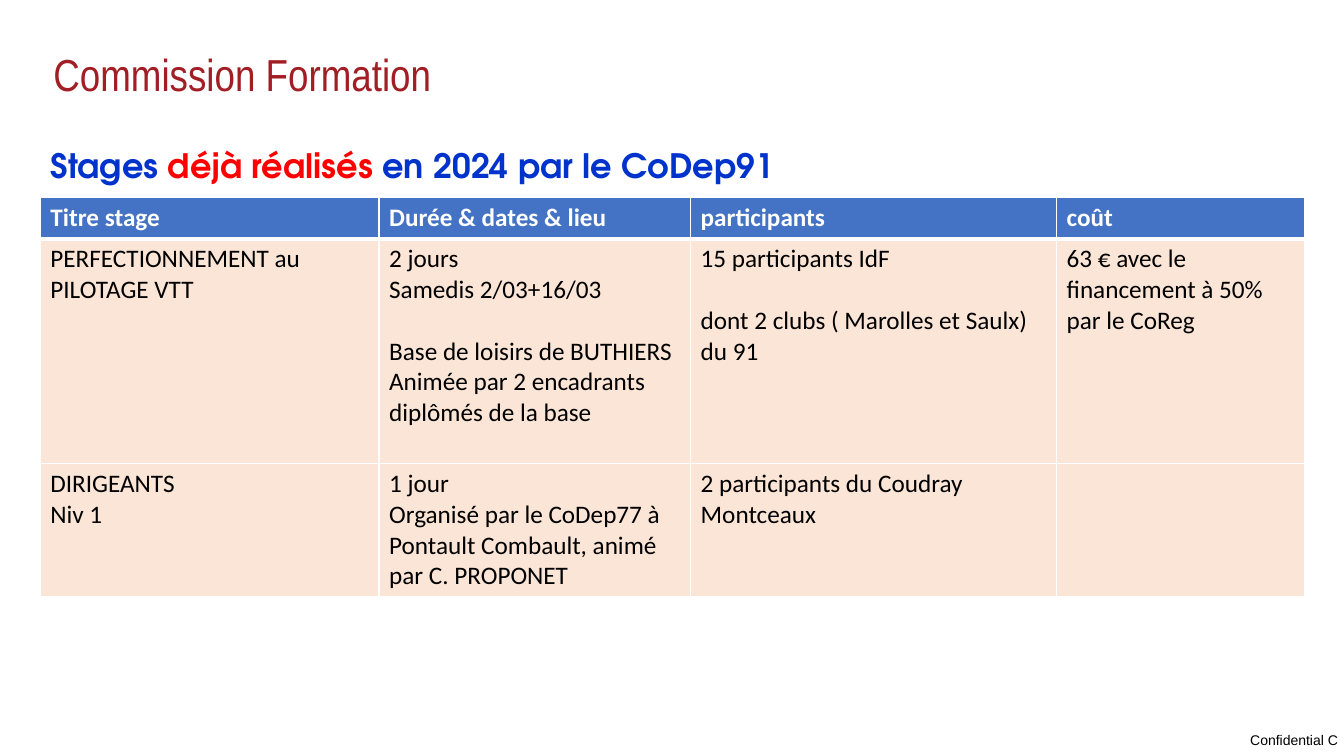
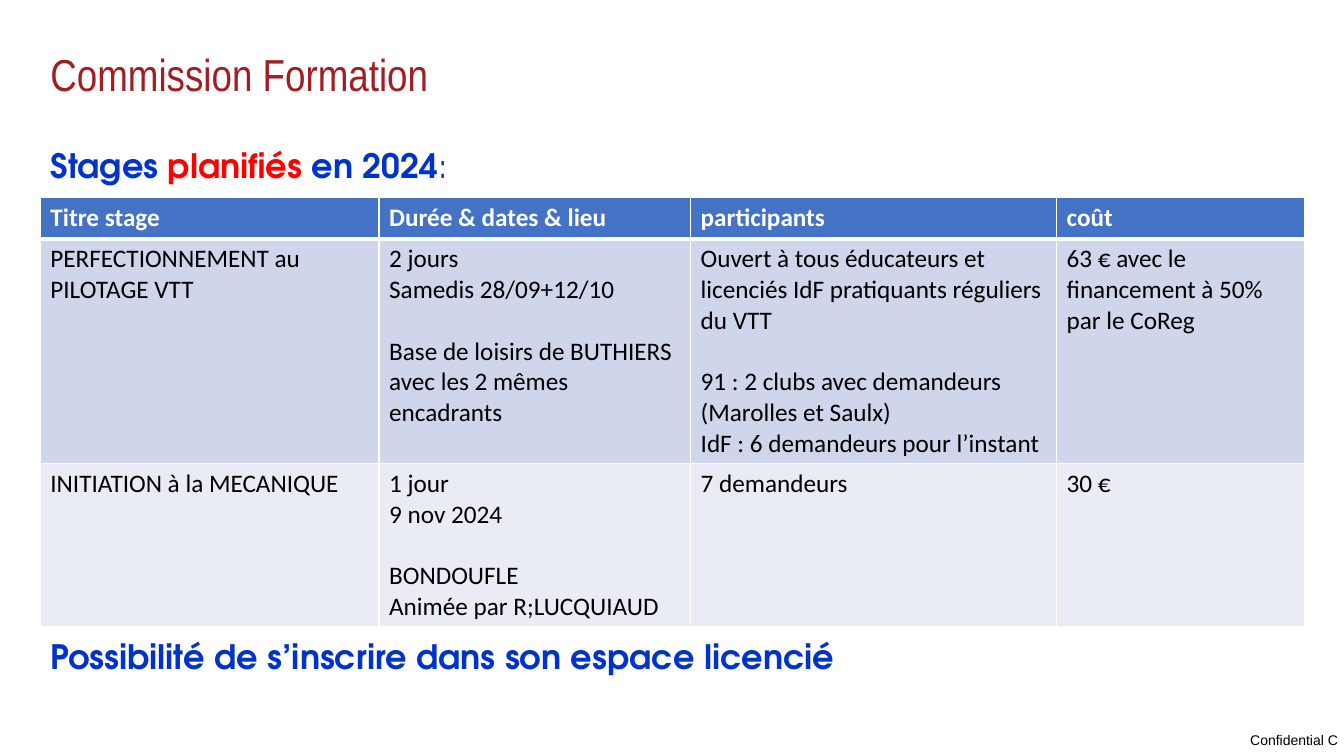
from lxml.etree import SubElement
from pptx import Presentation
from pptx.dml.color import RGBColor
from pptx.enum.text import MSO_ANCHOR as Anchor, MSO_AUTO_SIZE as AutoSize, PP_ALIGN as Align
from pptx.oxml.ns import qn
from pptx.util import Inches, Pt

# Shared look
SLIDE_WIDTH, SLIDE_HEIGHT = 13.33, 7.5
TITLE_ONLY = 5
MARGIN = 0.4
WHITE, BLACK = "FFFFFF", "000000"
TITLE_RED, BLUE, RED, NAVY = "A11E24", "0033CC", "FF0000", "292D78"
HEADER_FILL, PEACH, LAVENDER, PALE = "4472C4", "FBE5D6", "CFD5EA", "E9EBF5"
HEADING_FONT, TABLE_FONT = "TeX Gyre Adventor", "Calibri"

# Shared table grid
TABLE_TOP = 1.96
COLUMNS = (3.36, 3.09, 3.63, 2.46)
HEADER_HEIGHT, FIRST_STAGE_HEIGHT = 0.41, 2.23
HEADERS = ("Titre stage", "Durée & dates & lieu", "participants", "coût")
THIN, THICK = 1, 3


def rgb(value):
    return RGBColor.from_string(value)


def write_text(frame, text, *, font, size, color=BLACK, bold=False,
               line_spacing=None, group_gap=0):
    """Text is a string (blank line = new group) or a list of (text, color, bold) runs."""
    if isinstance(text, str):
        lines = [([(line, color, bold)], group_gap if number and not index else 0)
                 for number, group in enumerate(text.split("\n\n"))
                 for index, line in enumerate(group.split("\n"))]
    else:
        lines = [(text, 0)]
    for index, (runs, gap) in enumerate(lines):
        paragraph = frame.add_paragraph() if index else frame.paragraphs[0]
        paragraph.alignment = Align.LEFT
        paragraph.space_before = Pt(gap)
        if line_spacing:
            paragraph.line_spacing = line_spacing
        paragraph.font.size = Pt(size)
        for run_text, run_color, run_bold in runs:
            run = paragraph.add_run()
            run.text = run_text
            run.font.name = font
            run.font.size = Pt(size)
            run.font.bold = run_bold
            run.font.color.rgb = rgb(run_color)


def add_title(slide, text, left):
    title = slide.shapes.title
    title.left, title.top = Inches(left), Inches(0.39)
    title.width, title.height = Inches(10.76), Inches(0.75)
    title.text_frame.auto_size = AutoSize.NONE
    title.text_frame.vertical_anchor = Anchor.MIDDLE
    write_text(title.text_frame, text, font="Arial Narrow", size=32,
               color=TITLE_RED, line_spacing=0.9)


def add_textbox(slide, text, left, top, width, height, *, wrap=True, inset=None, **text_format):
    frame = slide.shapes.add_textbox(
        Inches(left), Inches(top), Inches(width), Inches(height)).text_frame
    frame.word_wrap = wrap
    if inset is not None:
        frame.margin_left = frame.margin_right = Inches(inset)
        frame.margin_top = frame.margin_bottom = Inches(inset)
    write_text(frame, text, **text_format)


def add_heading(slide, text, top):
    add_textbox(slide, text, MARGIN, top, 11.19, 0.5, font=HEADING_FONT, size=24,
                color=BLUE, bold=True, line_spacing=0.9)


def add_footer(slide):
    add_textbox(slide, "Confidential C", 12.4, 7.26, 0.91, 0.17, wrap=False, inset=0,
                font="Arial", size=10)


def set_borders(cell, top, bottom):
    properties = cell._tc.get_or_add_tcPr()
    for side, width in (("L", THIN), ("R", THIN), ("T", top), ("B", bottom)):
        line = SubElement(properties, qn(f"a:ln{side}"), w=str(Pt(width)))
        fill = SubElement(line, qn("a:solidFill"))
        SubElement(fill, qn("a:srgbClr"), val=WHITE)


def add_stage_table(slide, stages, fills, last_height):
    heights = (HEADER_HEIGHT, FIRST_STAGE_HEIGHT, last_height)
    rows = (HEADERS, *stages)
    table = slide.shapes.add_table(
        len(rows), len(COLUMNS), Inches(MARGIN), Inches(TABLE_TOP),
        Inches(sum(COLUMNS)), Inches(sum(heights))).table
    table.horz_banding = False
    for column, width in zip(table.columns, COLUMNS):
        column.width = Inches(width)
    for index, (texts, height, fill) in enumerate(zip(rows, heights, (HEADER_FILL, *fills))):
        table.rows[index].height = Inches(height)
        is_header = index == 0
        for cell, text in zip(table.rows[index].cells, texts):
            set_borders(cell, top=THICK if index == 1 else THIN,
                        bottom=THICK if is_header else THIN)
            cell.fill.solid()
            cell.fill.fore_color.rgb = rgb(fill)
            if text:
                write_text(cell.text_frame, text, font=TABLE_FONT, size=18, bold=is_header,
                           color=WHITE if is_header else BLACK, group_gap=22)


def add_stage_slide(presentation, heading, stages, fills, last_height, title_left=MARGIN):
    slide = presentation.slides.add_slide(presentation.slide_layouts[TITLE_ONLY])
    add_footer(slide)
    add_title(slide, "Commission Formation", title_left)
    add_heading(slide, heading, 1.43)
    add_stage_table(slide, stages, fills, last_height)
    return slide


def main():
    presentation = Presentation()
    presentation.slide_width = Inches(SLIDE_WIDTH)
    presentation.slide_height = Inches(SLIDE_HEIGHT)
    riding = "PERFECTIONNEMENT au PILOTAGE VTT"
    riding_cost = "63 € avec le financement à 50% par le CoReg"

    # Completed courses
    add_stage_slide(
        presentation,
        [("Stages ", BLUE, True), ("déjà réalisés ", RED, True),
         ("en 2024 par le CoDep91", BLUE, True)],
        [(riding,
          "2 jours\nSamedis 2/03+16/03\n\nBase de loisirs de BUTHIERS\n"
          "Animée par 2 encadrants diplômés de la base",
          "15 participants IdF\n\ndont 2 clubs ( Marolles et Saulx) du 91",
          riding_cost),
         ("DIRIGEANTS\nNiv 1",
          "1 jour\nOrganisé par le CoDep77 à Pontault Combault, animé par C. PROPONET",
          "2 participants du Coudray Montceaux",
          "")],
        (PEACH, PEACH), last_height=1.32, title_left=0.43)

    # Planned courses
    planned = add_stage_slide(
        presentation,
        [("Stages ", BLUE, True), ("planifiés ", RED, True),
         ("en 2024", BLUE, True), (":", NAVY, False)],
        [(riding,
          "2 jours\nSamedis 28/09+12/10\n\nBase de loisirs de BUTHIERS\n"
          "avec les 2 mêmes encadrants",
          "Ouvert à tous éducateurs et licenciés IdF pratiquants réguliers du VTT\n\n"
          "91 : 2 clubs avec demandeurs (Marolles et Saulx)\n"
          "IdF : 6 demandeurs pour l’instant",
          riding_cost),
         ("INITIATION à la MECANIQUE",
          "1 jour\n9 nov 2024\n\nBONDOUFLE\nAnimée par R;LUCQUIAUD",
          "7 demandeurs",
          "30 €")],
        (LAVENDER, PALE), last_height=1.62)
    add_heading(planned, "Possibilité de s’inscrire dans son espace licencié", 6.3)

    presentation.save("out.pptx")


if __name__ == "__main__":
    main()
